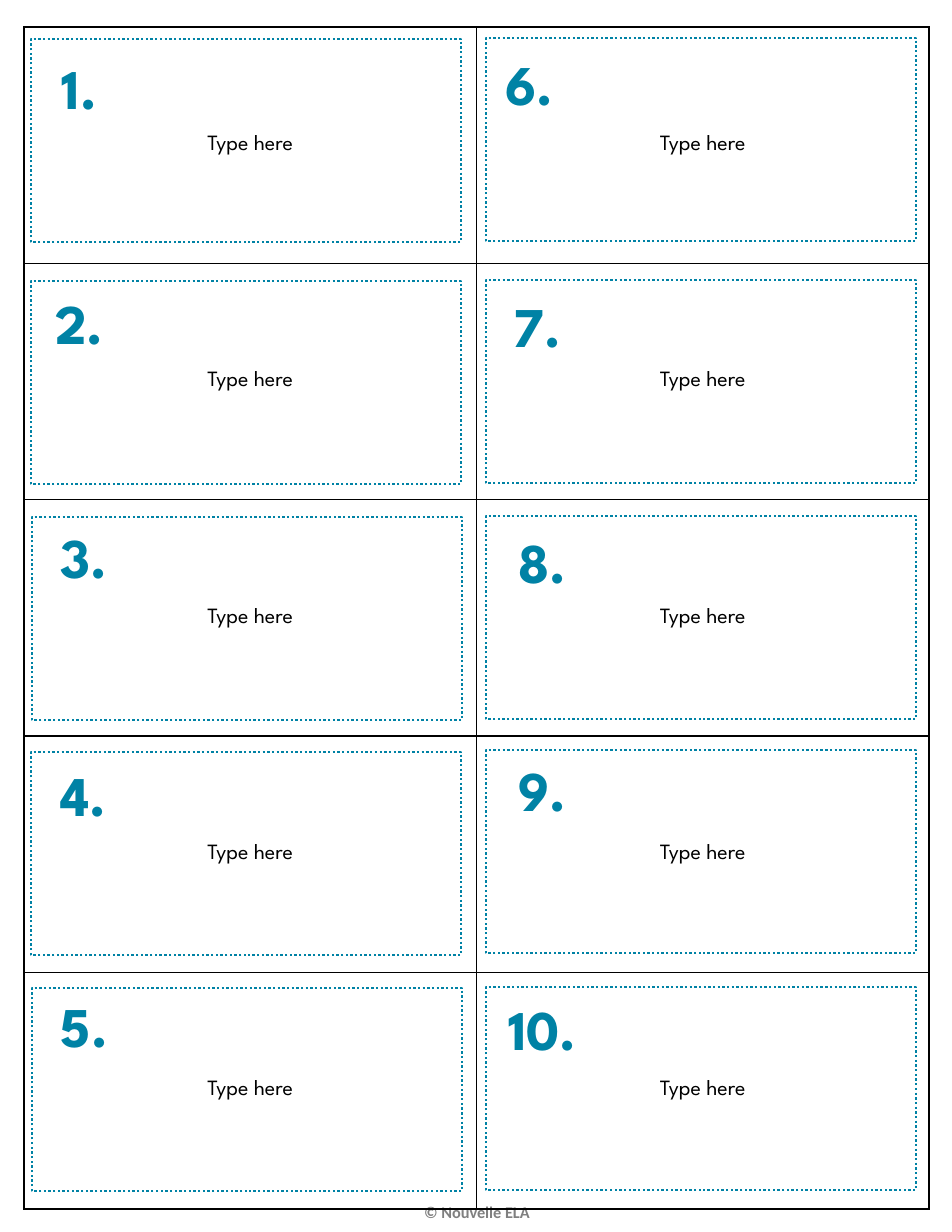
from lxml.etree import SubElement
from pptx import Presentation
from pptx.dml.color import RGBColor
from pptx.enum.dml import MSO_LINE
from pptx.enum.shapes import MSO_SHAPE
from pptx.enum.text import MSO_ANCHOR, PP_ALIGN
from pptx.oxml.ns import qn
from pptx.util import Pt

PROMPT = "Type here"
FOOTER = "© Nouvelle ELA"
COLS, ROWS = 2, 5
TABLE = (24, 27, 905, 1182)
FRAME_SIZE = (430, 203)
LABEL_SIZE = (137, 80)
CARDS = [
    {"label": "1.", "label_at": (11, 48), "frame_at": (31, 39)},
    {"label": "2.", "label_at": (11, 283), "frame_at": (31, 281)},
    {"label": "3.", "label_at": (16, 517), "frame_at": (32, 517)},
    {"label": "4.", "label_at": (15, 755), "frame_at": (31, 752)},
    {"label": "5.", "label_at": (16, 986), "frame_at": (32, 988)},
    {"label": "6.", "label_at": (461, 44), "frame_at": (486, 38)},
    {"label": "7.", "label_at": (469, 286), "frame_at": (486, 280)},
    {"label": "8.", "label_at": (474, 522), "frame_at": (486, 516)},
    {"label": "9.", "label_at": (474, 750), "frame_at": (486, 750)},
    {"label": "10.", "label_at": (474, 989), "frame_at": (486, 987)},
]
TEAL, BLACK, GRAY = "0082A5", "000000", "808080"
PROMPT_FONT = {"name": "League Spartan", "size": Pt(14), "bold": False}
LABEL_FONT = {"name": "League Spartan", "size": Pt(36), "bold": True}
FOOTER_FONT = {"name": "Calibri", "size": Pt(10.5), "bold": True}


def px(n):
    return round(n * 914400 / 112)


def color(value):
    return RGBColor.from_string(value)


def write(tf, text, font, hue):
    p = tf.paragraphs[0]
    p.alignment = PP_ALIGN.CENTER
    r = p.add_run()
    r.text = text
    for key, value in font.items():
        setattr(r.font, key, value)
    r.font.color.rgb = color(hue)


def add_text(s, box, text, font, hue):
    tf = s.shapes.add_textbox(*map(px, box)).text_frame
    tf.word_wrap = True
    write(tf, text, font, hue)


def add_borders(cell):
    pr = cell._tc.get_or_add_tcPr()
    for i, side in enumerate(("lnL", "lnR", "lnT", "lnB")):
        ln = SubElement(pr, qn(f"a:{side}"), w=str(Pt(1)))
        fill = SubElement(ln, qn("a:solidFill"))
        SubElement(fill, qn("a:srgbClr"), val=BLACK)
        pr.insert(i, ln)


def add_grid(s):
    table = s.shapes.add_table(ROWS, COLS, *map(px, TABLE)).table
    table.first_row = table.horz_banding = False
    for col in table.columns:
        col.width = px(TABLE[2] / COLS)
    for row in table.rows:
        row.height = px(TABLE[3] / ROWS)
    for cell in table.iter_cells():
        cell.fill.background()
        cell.vertical_anchor = MSO_ANCHOR.MIDDLE
        write(cell.text_frame, PROMPT, PROMPT_FONT, BLACK)
        add_borders(cell)


def add_frame(s, at):
    sp = s.shapes.add_shape(MSO_SHAPE.RECTANGLE, *map(px, at + FRAME_SIZE))
    sp.shadow.inherit = False
    sp.fill.background()
    sp.line.color.rgb = color(TEAL)
    sp.line.width = Pt(1.5)
    sp.line.dash_style = MSO_LINE.ROUND_DOT


def main():
    prs = Presentation()
    prs.slide_width, prs.slide_height = px(952), px(1232)
    s = prs.slides.add_slide(prs.slide_layouts[6])
    add_text(s, (333, 1197, 288, 32), FOOTER, FOOTER_FONT, GRAY)
    add_grid(s)
    for card in CARDS:
        add_text(s, card["label_at"] + LABEL_SIZE, card["label"], LABEL_FONT, TEAL)
    for card in CARDS:
        add_frame(s, card["frame_at"])
    prs.save("out.pptx")


if __name__ == "__main__":
    main()
